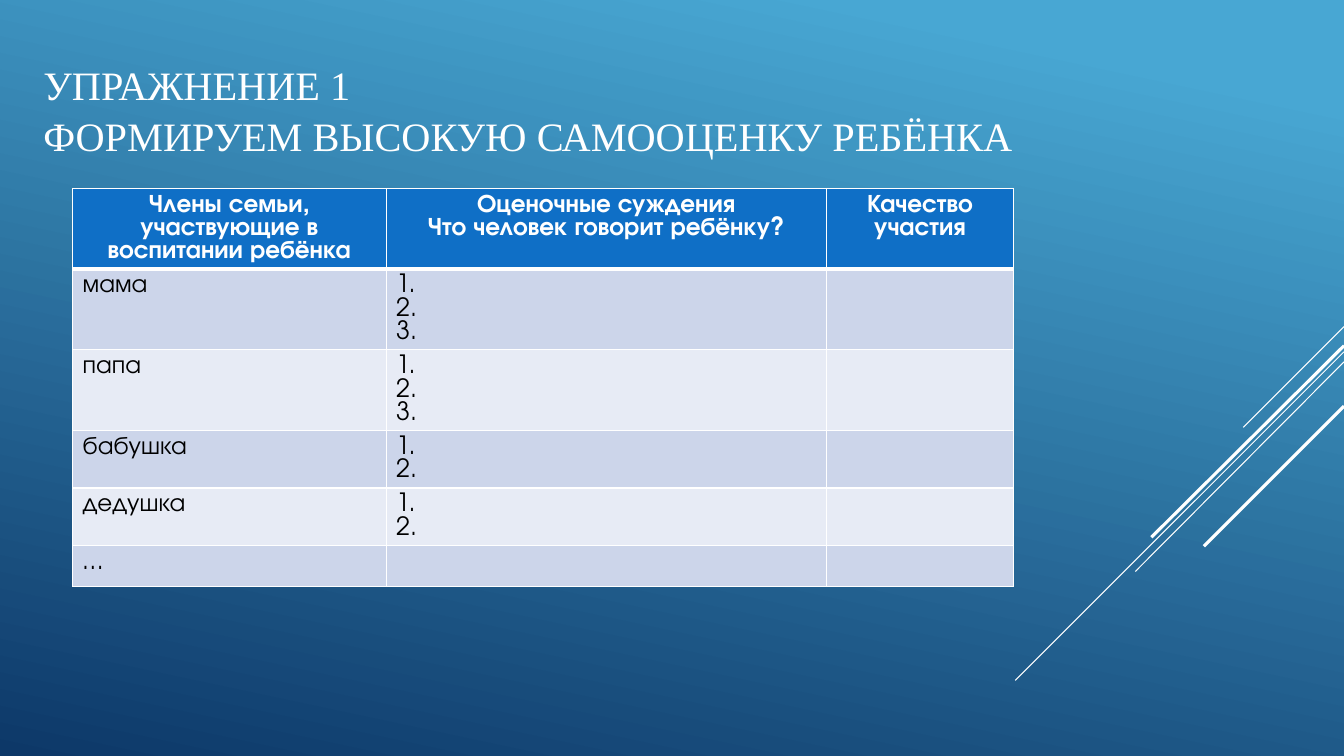
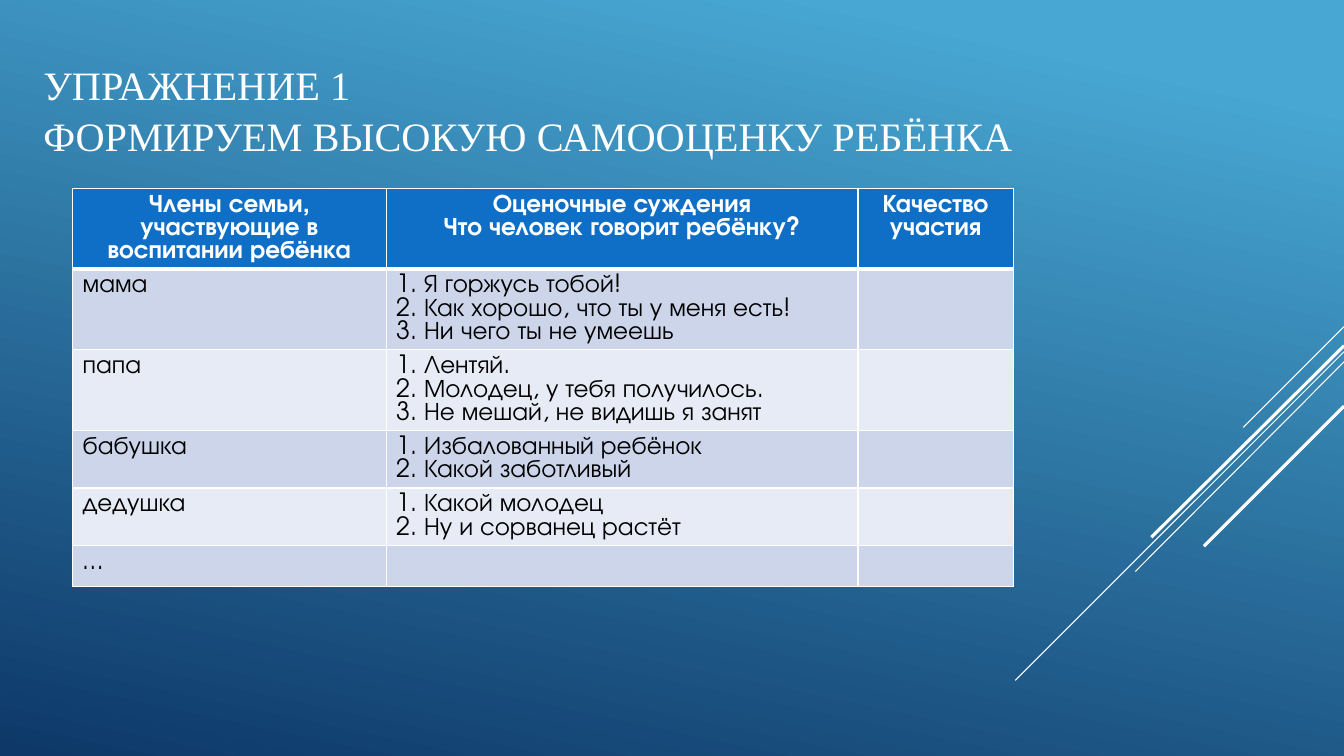
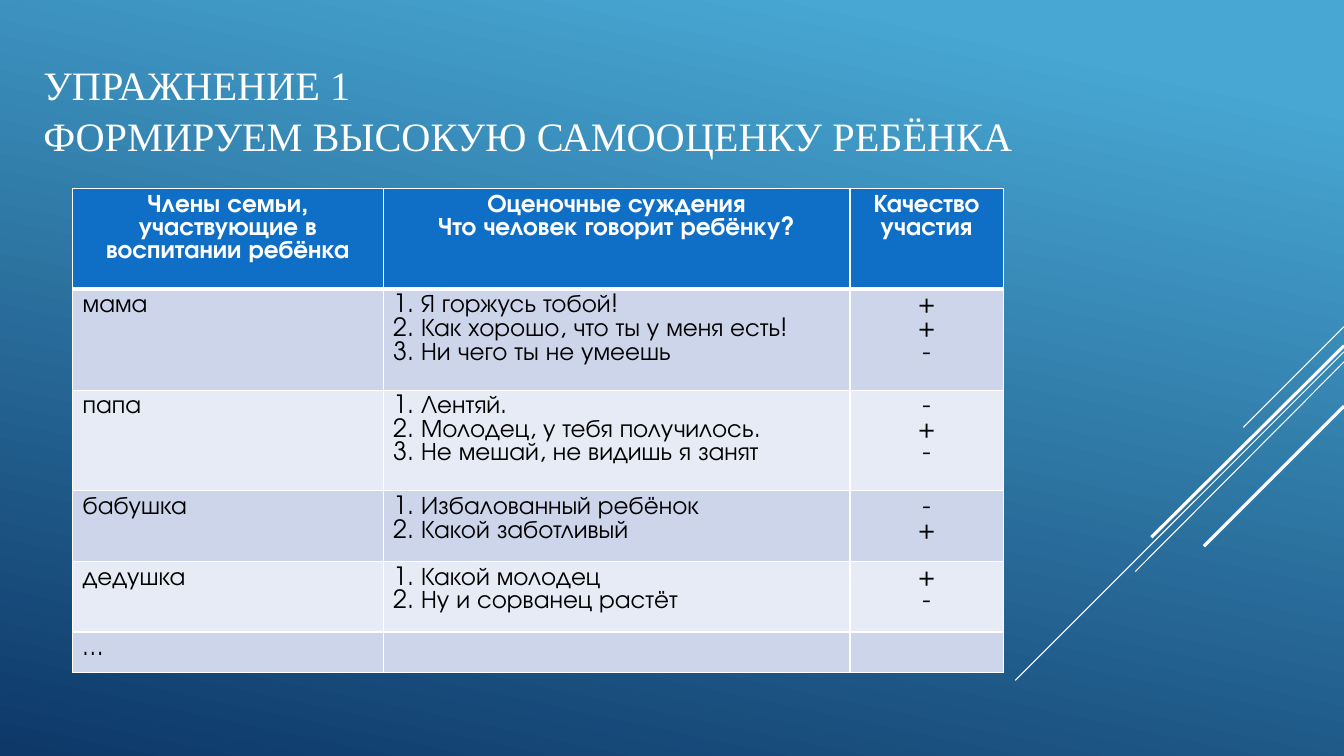
from dataclasses import dataclass

from copy import deepcopy
from lxml.etree import SubElement
from pptx import Presentation
from pptx.dml.color import RGBColor
from pptx.enum.shapes import MSO_CONNECTOR
from pptx.enum.text import MSO_ANCHOR, PP_ALIGN
from pptx.oxml.ns import qn
from pptx.util import Inches, Pt


@dataclass(frozen=True)
class Theme:
    white: str = "FFFFFF"
    black: str = "000000"
    sky: str = "48A7D3"
    navy: str = "0D3868"
    header: str = "0F6FC6"
    bands: tuple = ("CCD5EA", "E7EBF5")
    title_font: str = "Times New Roman"
    body_font: str = "TeX Gyre Adventor"
    title_size: float = 28.8
    body_size: float = 18
    thin: float = 0.75
    thick: float = 2.25
    grid: float = 1
    header_rule: float = 3


THEME = Theme()
SLIDE_WIDTH, SLIDE_HEIGHT = 13.33, 7.5
TITLE_BOX = (0.33, 0.25, 10.11, 1.65)
TABLE_CORNER = (0.72, 1.87)
RAYS = [
    (3.24, 12.33, 4.24, THEME.thin),
    (3.49, 10.07, 6.75, THEME.thin),
    (3.59, 11.26, 5.67, THEME.thin),
    (3.43, 11.42, 5.33, THEME.thick),
    (4.03, 11.94, 5.42, THEME.thick),
]
TITLE = "УПРАЖНЕНИЕ 1\vФОРМИРУЕМ ВЫСОКУЮ САМООЦЕНКУ РЕБЁНКА"
HEADINGS = (
    "Члены семьи, участвующие в воспитании ребёнка",
    "Оценочные суждения\nЧто человек говорит ребёнку?",
    "Качество участия",
)
FAMILY = ("мама", "папа", "бабушка", "дедушка", "…")
NUMBERS = ("1.\n2.\n3.", "1.\n2.\n3.", "1.\n2.", "1.\n2.", "")
PHRASES = (
    "1. Я горжусь тобой!\n2. Как хорошо, что ты у меня есть!\n3. Ни чего ты не умеешь",
    "1. Лентяй.\n2. Молодец, у тебя получилось.\n3. Не мешай, не видишь я занят",
    "1. Избалованный ребёнок\n2. Какой заботливый",
    "1. Какой молодец\n2. Ну и сорванец растёт",
    "",
)
UNRATED = ("",) * len(FAMILY)
RATINGS = ("+\n+\n-", "-\n+\n-", "-\n+", "+\n-", "")
COMPACT_ROWS = (0.8, 0.8, 0.8, 0.57, 0.57, 0.41)
ROOMY_ROWS = (1, 1, 1, 0.7, 0.7, 0.4)
EXERCISES = [
    (NUMBERS, UNRATED, (3.11, 4.37, 1.85), COMPACT_ROWS),
    (PHRASES, UNRATED, (3.11, 4.68, 1.54), COMPACT_ROWS),
    (PHRASES, RATINGS, (3.08, 4.63, 1.52), ROOMY_ROWS),
]


def write(frame, text, font=THEME.body_font, size=THEME.body_size, color=THEME.black,
          bold=False, align=PP_ALIGN.LEFT, spacing=None):
    frame.text = text
    for para in frame.paragraphs:
        para.alignment = align
        para.line_spacing = spacing
        for span in para.runs:
            span.font.name = font
            span.font.size = Pt(size)
            span.font.bold = bold
            span.font.color.rgb = RGBColor.from_string(color)


def style_master(master):
    fill = master.background.fill
    fill.gradient()
    fill.gradient_angle = 258
    for stop, position, color in zip(fill.gradient_stops, (0.1, 1), (THEME.sky, THEME.navy)):
        stop.position = position
        stop.color.rgb = RGBColor.from_string(color)
    stops = master.element.find(".//" + qn("a:gsLst"))
    first = deepcopy(stops[0])
    first.set("pos", "0")
    stops.insert(0, first)
    level = master.element.find(".//" + qn("p:titleStyle")).find(qn("a:lvl1pPr"))
    level.set("algn", "l")
    defaults = level.find(qn("a:defRPr"))
    defaults.set("sz", str(round(THEME.title_size * 100)))
    defaults.find(qn("a:latin")).set("typeface", THEME.title_font)


def style_title(layout):
    title = next(item for item in layout.placeholders if item.placeholder_format.idx == 0)
    title.left, title.top, title.width, title.height = map(Inches, TITLE_BOX)
    title.text_frame.vertical_anchor = MSO_ANCHOR.MIDDLE


def add_rays(slide, master):
    for number, (top, end_left, end_top, weight) in enumerate(RAYS, 101):
        ray = slide.shapes.add_connector(
            MSO_CONNECTOR.STRAIGHT, Inches(SLIDE_WIDTH), Inches(top),
            Inches(end_left), Inches(end_top))
        ray.line.color.rgb = RGBColor.from_string(THEME.white)
        ray.line.width = Pt(weight)
        SubElement(ray.element.spPr, qn("a:effectLst"))
        ray.element.find(".//" + qn("p:cNvPr")).set("id", str(number))
        master.shapes.element.append(ray.element)


def add_border(cell, side, weight):
    properties = cell._tc.get_or_add_tcPr()
    line = SubElement(properties, qn("a:ln" + side), w=str(Pt(weight)))
    color = SubElement(SubElement(line, qn("a:solidFill")), qn("a:srgbClr"))
    color.set("val", THEME.white)


def format_cell(cell, row, column, text):
    is_header = row == 0
    heavy_sides = {0: "B", 1: "T"}.get(row, "")
    for side in "LRTB":
        add_border(cell, side, THEME.header_rule if side == heavy_sides else THEME.grid)
    cell.fill.solid()
    color = THEME.header if is_header else THEME.bands[(row - 1) % 2]
    cell.fill.fore_color.rgb = RGBColor.from_string(color)
    if text:
        centred = is_header or column == 2
        write(cell.text_frame, text, bold=is_header,
              color=THEME.white if is_header else THEME.black,
              align=PP_ALIGN.CENTER if centred else PP_ALIGN.LEFT)


def add_family_table(slide, corner, rows, widths, heights):
    box = (*corner, sum(widths), sum(heights))
    table = slide.shapes.add_table(len(rows), len(widths), *map(Inches, box)).table
    for column, width in zip(table.columns, widths):
        column.width = Inches(width)
    for row, height in zip(table.rows, heights):
        row.height = Inches(height)
    for row, texts in enumerate(rows):
        for column, text in enumerate(texts):
            format_cell(table.cell(row, column), row, column, text)


def add_exercise(deck, layout, judgements, ratings, widths, heights):
    slide = deck.slides.add_slide(layout)
    write(slide.shapes.title.text_frame, TITLE, font=THEME.title_font,
          size=THEME.title_size, color=THEME.white, spacing=1.06)
    rows = [HEADINGS, *zip(FAMILY, judgements, ratings)]
    add_family_table(slide, TABLE_CORNER, rows, widths, heights)
    return slide


def main():
    deck = Presentation()
    deck.slide_width, deck.slide_height = Inches(SLIDE_WIDTH), Inches(SLIDE_HEIGHT)
    layout = deck.slide_layouts[5]
    style_master(deck.slide_master)
    style_title(layout)
    slides = [add_exercise(deck, layout, *exercise) for exercise in EXERCISES]
    add_rays(slides[0], deck.slide_master)
    deck.save("out.pptx")


if __name__ == "__main__":
    main()
